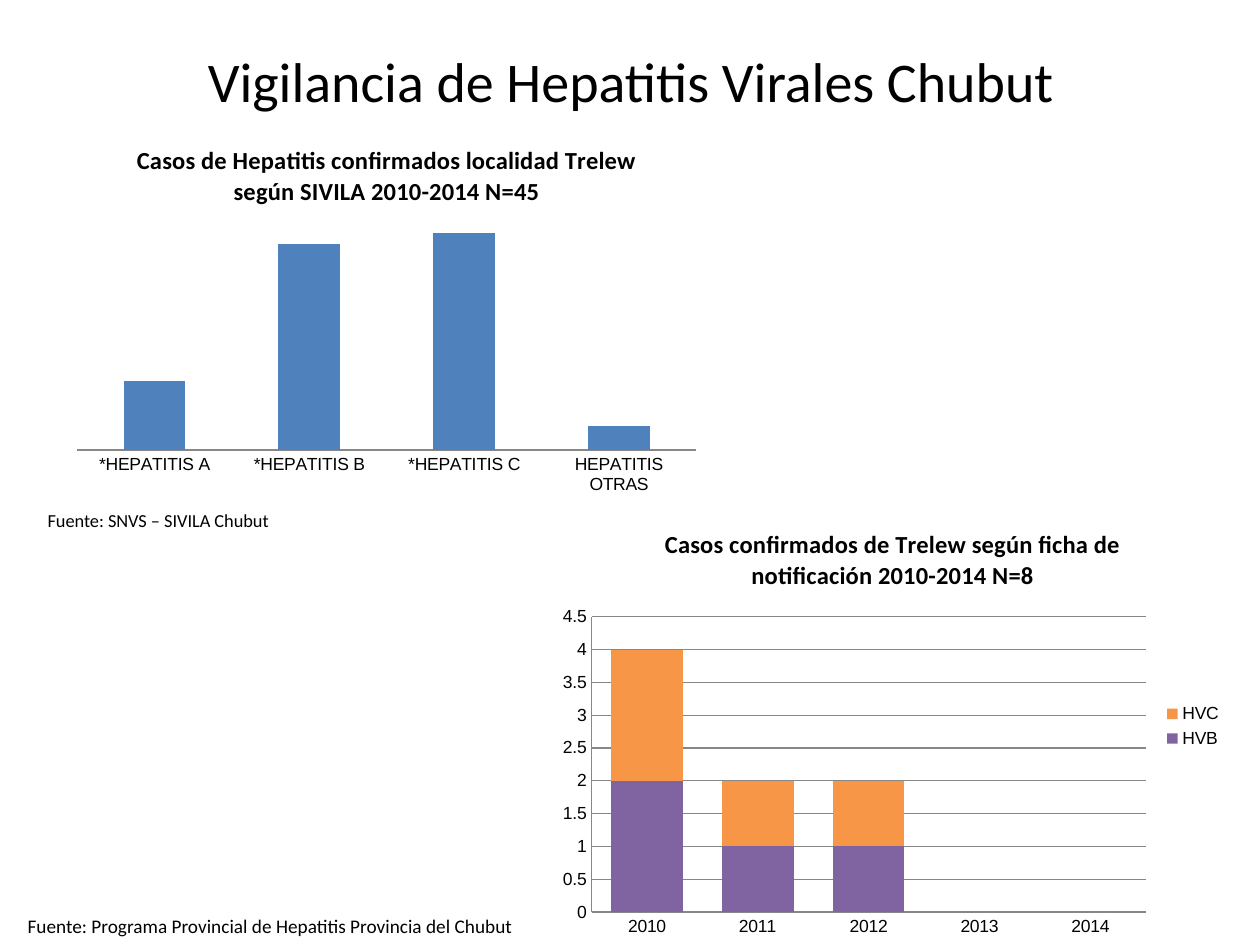
"""Build the Chubut viral hepatitis surveillance slide with two column charts."""
from dataclasses import dataclass
from typing import Any, Optional

import pptx
import pptx.chart.data
import pptx.dml.color
import pptx.enum.chart
import pptx.enum.text
import pptx.oxml
import pptx.oxml.ns
import pptx.util

WIDE, HIGH = 10, 7.5
HUES = {"ink": "000000", "axis": "878787", "plot": "FFFFFF",
        "blue": "4F81BD", "plum": "8064A2", "gold": "F79646"}
KINDS = pptx.enum.chart.XL_CHART_TYPE
NONE = pptx.enum.chart.XL_TICK_MARK.NONE
TOP, MID = pptx.enum.text.MSO_ANCHOR.TOP, pptx.enum.text.MSO_ANCHOR.MIDDLE
LEFT, MIDST = pptx.enum.text.PP_ALIGN.LEFT, pptx.enum.text.PP_ALIGN.CENTER
SPACE = f'xmlns:c="{pptx.oxml.ns.nsuri("c")}" xmlns:a="{pptx.oxml.ns.nsuri("a")}"'
Box = tuple[float, float, float, float]


@dataclass
class Note:
    text: str
    box: Box
    size: float
    align: Any = LEFT
    anchor: Any = TOP


@dataclass
class Set:
    name: str
    vals: list[Optional[float]]
    hue: str


@dataclass
class Graph:
    title: str
    box: Box
    kind: Any
    cats: list[str]
    sets: list[Set]
    form: dict[str, int]
    inner: Box
    scale: dict[str, Any]
    legend: bool


NOTES = [
    Note("Vigilancia de Hepatitis Virales Chubut", (0.051, 0.001, 0.9, 0.167), 32, MIDST, MID),
    Note("Fuente: Programa Provincial de Hepatitis Provincia del Chubut",
         (0.012, 0.961, 0.409, 0.037), 11),
    Note("Fuente: SNVS – SIVILA Chubut", (0.028, 0.532, 0.433, 0.036), 10.5),
]
GRAPHS = [
    Graph("Casos confirmados de Trelew según ficha de notificación 2010-2014 N=8",
          (0.437, 0.537, 0.543, 0.463), KINDS.COLUMN_STACKED,
          [str(year) for year in range(2010, 2015)],
          [Set("HVB", [2, 1, 1, None, None], "plum"),
           Set("HVC", [2, 1, 1, None, None], "gold")],
          {"gap_width": 55, "overlap": 100}, (0.06, 0.25, 0.81, 0.675),
          {"minimum_scale": 0, "maximum_scale": 4.5, "major_unit": 0.5,
           "has_major_gridlines": True}, True),
    Graph("Casos de Hepatitis confirmados localidad Trelew según SIVILA 2010-2014 N=45",
          (0.051, 0.132, 0.512, 0.4), KINDS.COLUMN_CLUSTERED,
          ["*HEPATITIS A", "*HEPATITIS B", "*HEPATITIS C", "HEPATITIS OTRAS"],
          [Set("Series 1", [32, 95, 100, 11], "blue")],
          {"gap_width": 150}, (0.02, 0.287, 0.96, 0.574),
          {"minimum_scale": 0, "maximum_scale": 100, "has_major_gridlines": False,
           "visible": False}, False),
]


def apply(item: Any, form: dict[str, Any]) -> None:
    for key, val in form.items():
        setattr(item, key, val)


def tint(hue: str) -> pptx.dml.color.RGBColor:
    return pptx.dml.color.RGBColor.from_string(HUES[hue])


def place(box: Box) -> list[int]:
    return [pptx.util.Inches(part * full) for part, full in zip(box, (WIDE, HIGH) * 2)]


def style(font: Any, face: str, size: float, bold: bool = False) -> None:
    apply(font, {"name": face, "size": pptx.util.Pt(size), "bold": bold})
    font.color.rgb = tint("ink")


def rule(line: Any) -> None:
    line.color.rgb = tint("axis")
    line.width = pptx.util.Pt(0.75)


def write(slide: Any, note: Note) -> None:
    frame = slide.shapes.add_textbox(*place(note.box)).text_frame
    apply(frame, {"word_wrap": True, "vertical_anchor": note.anchor, "text": note.text})
    para = frame.paragraphs[0]
    para.alignment = note.align
    style(para.runs[0].font, "Calibri", note.size)


def frame_plot(chart: Any, inner: Box) -> None:
    area = chart.plots[0]._element.getparent()
    for old in area.findall(pptx.oxml.ns.qn("c:layout")):
        area.remove(old)
    spots = "".join(f'<c:{key} val="{val}"/>' for key, val in zip("xywh", inner))
    area.insert(0, pptx.oxml.parse_xml(
        f'<c:layout {SPACE}><c:manualLayout><c:layoutTarget val="inner"/>'
        f'<c:xMode val="edge"/><c:yMode val="edge"/>{spots}'
        '</c:manualLayout></c:layout>'))
    area.append(pptx.oxml.parse_xml(
        f'<c:spPr {SPACE}><a:solidFill><a:srgbClr val="{HUES["plot"]}"/>'
        '</a:solidFill></c:spPr>'))


def draw(slide: Any, graph: Graph) -> None:
    data = pptx.chart.data.CategoryChartData()
    data.categories = graph.cats
    for item in graph.sets:
        data.add_series(item.name, item.vals)
    chart = slide.shapes.add_chart(graph.kind, *place(graph.box), data).chart
    style(chart.font, "Arial", 10)
    head = chart.chart_title
    head.text_frame.text = graph.title
    style(head.text_frame.paragraphs[0].runs[0].font, "Calibri", 14, True)
    for lay in head._element.findall(pptx.oxml.ns.qn("c:overlay")):
        lay.set("val", "1")
    plot = chart.plots[0]
    apply(plot, {"vary_by_categories": False, **graph.form})
    for bar, item in zip(plot.series, graph.sets):
        bar.format.fill.solid()
        bar.format.fill.fore_color.rgb = tint(item.hue)
    apply(chart.value_axis, graph.scale)
    for axis in (chart.category_axis, chart.value_axis):
        apply(axis, {"major_tick_mark": NONE, "minor_tick_mark": NONE})
        rule(axis.format.line)
    if chart.value_axis.has_major_gridlines:
        rule(chart.value_axis.major_gridlines.format.line)
    chart.has_legend = graph.legend
    if graph.legend:
        apply(chart.legend, {"position": pptx.enum.chart.XL_LEGEND_POSITION.RIGHT,
                             "include_in_layout": True})
    frame_plot(chart, graph.inner)


def main() -> None:
    deck = pptx.Presentation()
    apply(deck, {"slide_width": pptx.util.Inches(WIDE), "slide_height": pptx.util.Inches(HIGH)})
    slide = deck.slides.add_slide(deck.slide_layouts[6])
    for graph in GRAPHS:
        draw(slide, graph)
    for note in NOTES:
        write(slide, note)
    deck.save("out.pptx")


if __name__ == "__main__":
    main()
